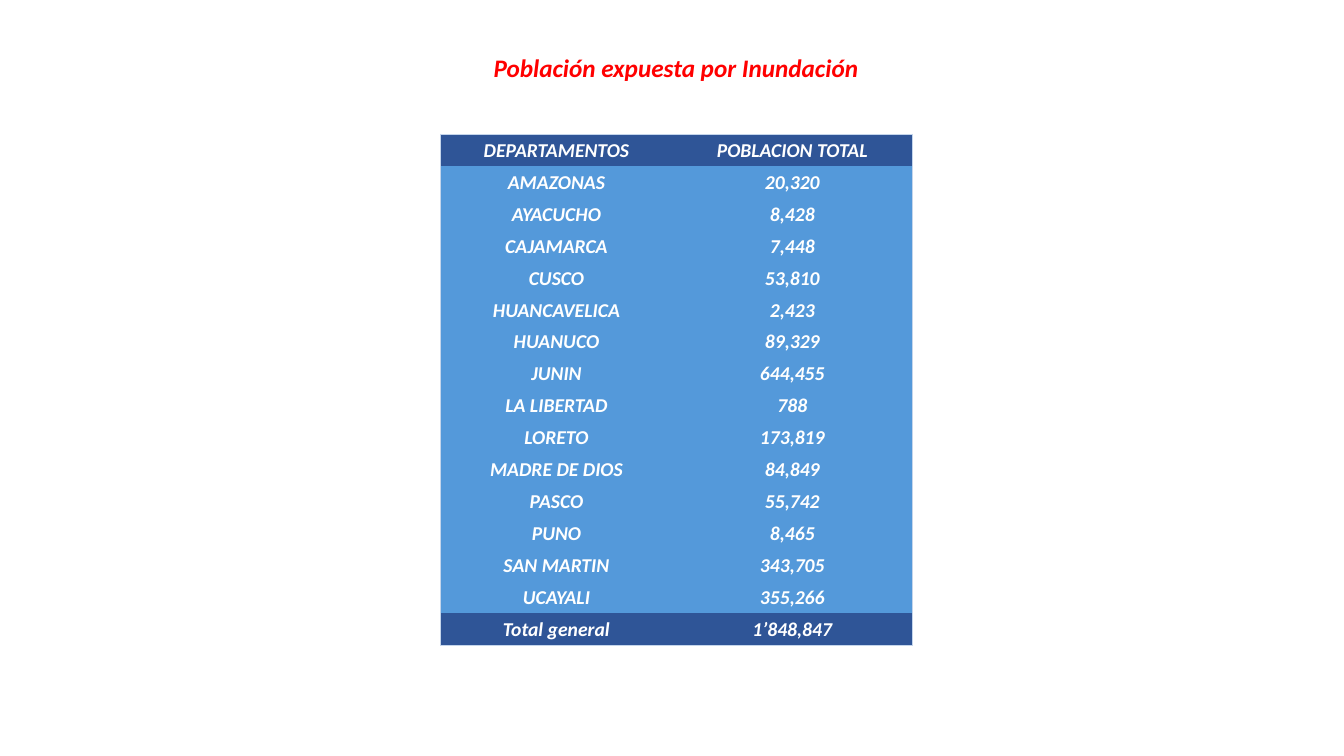
import pptx
import pptx.dml.color
import pptx.enum.text
import pptx.oxml.ns
import pptx.util
from lxml import etree

RGBColor = pptx.dml.color.RGBColor
RED = RGBColor(0xFF, 0x00, 0x00)
WHITE = RGBColor(0xFF, 0xFF, 0xFF)
NAVY = RGBColor(0x2F, 0x55, 0x97)
BLUE = RGBColor(0x54, 0x99, 0xDA)
PALE_BLUE = RGBColor(0xC4, 0xD5, 0xEB)
NO_STYLE_NO_GRID = "{2D5ABB26-0587-4C30-8999-92F81FD0307C}"

POPULATION = [
    ("DEPARTAMENTOS", "POBLACION TOTAL"),
    ("AMAZONAS", "20,320"),
    ("AYACUCHO", "8,428"),
    ("CAJAMARCA", "7,448"),
    ("CUSCO", "53,810"),
    ("HUANCAVELICA", "2,423"),
    ("HUANUCO", "89,329"),
    ("JUNIN", "644,455"),
    ("LA LIBERTAD", "788"),
    ("LORETO", "173,819"),
    ("MADRE DE DIOS", "84,849"),
    ("PASCO", "55,742"),
    ("PUNO", "8,465"),
    ("SAN MARTIN", "343,705"),
    ("UCAYALI", "355,266"),
    ("Total general", "1’848,847"),
]


class SlideBuilder:
    """Holds the style and slide; lengths are percentages of the slide's size."""

    font = "Calibri"
    title_size = 18
    table_size = 14

    def __init__(self, prs):
        self.width, self.height = prs.slide_width, prs.slide_height
        self.slide = prs.slides.add_slide(prs.slide_layouts[5])

    def x(self, share):
        return round(self.width * share / 100)

    def y(self, share):
        return round(self.height * share / 100)

    def format_text(self, tf, size, color):
        for p in tf.paragraphs:
            p.alignment = pptx.enum.text.PP_ALIGN.CENTER
            for r in p.runs:
                r.font.name = self.font
                r.font.size = pptx.util.Pt(size)
                r.font.bold = r.font.italic = True
                r.font.color.rgb = color

    def title(self, text, left, top, width, height):
        sp = self.slide.shapes.title
        sp.left, sp.top = self.x(left), self.y(top)
        sp.width, sp.height = self.x(width), self.y(height)
        tf = sp.text_frame
        tf.text = text
        tf.word_wrap = False
        tf.auto_size = pptx.enum.text.MSO_AUTO_SIZE.SHAPE_TO_FIT_TEXT
        tf.vertical_anchor = pptx.enum.text.MSO_ANCHOR.MIDDLE
        self.format_text(tf, self.title_size, RED)

    def borders(self, cell, outer):
        """Draw the sides of the cell named in outer and clear the others."""
        qn = pptx.oxml.ns.qn
        tcPr = cell._tc.get_or_add_tcPr()
        for side in "LRTB":
            ln = etree.SubElement(tcPr, qn(f"a:ln{side}"), w=str(int(pptx.util.Pt(0.5))))
            if side in outer:
                fill = etree.SubElement(ln, qn("a:solidFill"))
                etree.SubElement(fill, qn("a:srgbClr"), val=str(PALE_BLUE))
            else:
                etree.SubElement(ln, qn("a:noFill"))

    def table(self, rows, left, top, col_widths, row_height):
        last = len(rows) - 1
        frame = self.slide.shapes.add_table(
            len(rows), len(col_widths), self.x(left), self.y(top),
            self.x(sum(col_widths)), self.y(row_height * len(rows)))
        table = frame.table
        table.first_row = table.horz_banding = False
        style = next(frame.element.iter(pptx.oxml.ns.qn("a:tableStyleId")))
        style.text = NO_STYLE_NO_GRID
        for column, width in zip(table.columns, col_widths):
            column.width = self.x(width)
        for i, values in enumerate(rows):
            table.rows[i].height = self.y(row_height)
            for j, value in enumerate(values):
                cell = table.cell(i, j)
                cell.text = value
                cell.margin_left = cell.margin_right = pptx.util.Inches(0.01)
                cell.margin_top = pptx.util.Inches(0.01)
                cell.margin_bottom = 0
                cell.vertical_anchor = pptx.enum.text.MSO_ANCHOR.MIDDLE
                self.format_text(cell.text_frame, self.table_size, WHITE)
                edges = {"L": j == 0, "R": j == len(values) - 1,
                         "T": i == 0, "B": i == last}
                self.borders(cell, [side for side, drawn in edges.items() if drawn])
                cell.fill.solid()
                cell.fill.fore_color.rgb = NAVY if i in (0, last) else BLUE


def main():
    prs = pptx.Presentation()
    prs.slide_width = pptx.util.Inches(13.33)
    prs.slide_height = pptx.util.Inches(7.5)
    s = SlideBuilder(prs)
    s.title("Población expuesta por Inundación", 35.86, 6.27, 28.88, 5.33)
    s.table(POPULATION, 32.78, 17.73, (17.25, 17.85), 4.23)
    prs.save("out.pptx")


if __name__ == "__main__":
    main()
